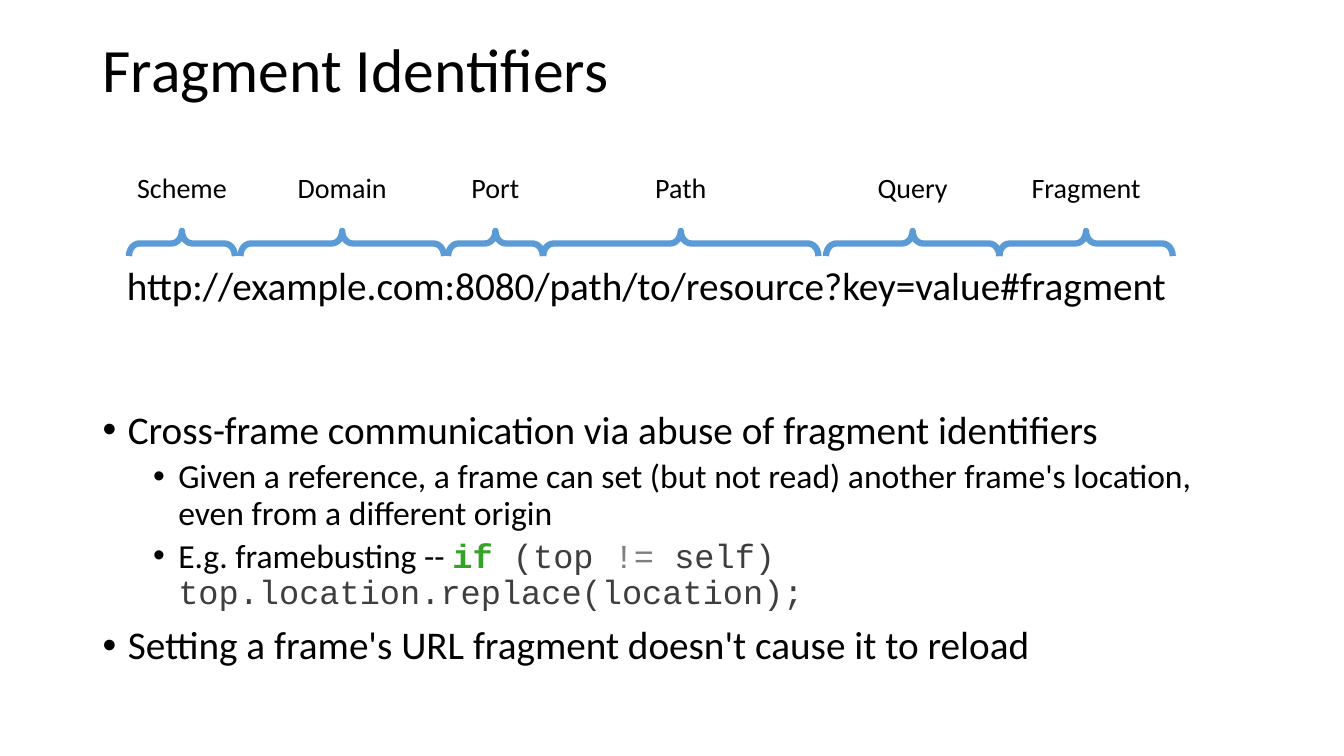
from dataclasses import dataclass
from lxml.etree import SubElement as Sub
from pptx import Presentation
from pptx.dml.color import RGBColor as Rgb
from pptx.enum.shapes import MSO_SHAPE as Kind
from pptx.enum.text import MSO_ANCHOR as Anchor, PP_ALIGN as Align
from pptx.oxml.ns import qn
from pptx.util import Inches, Pt

WIDE, HIGH = Inches(13.33), Inches(7.5)


@dataclass(frozen=True)
class Theme:
    font: str = "Calibri"
    mono: str = "Courier New"
    ink: str = "000000"
    brace: str = "5B9BD5"
    key: str = "35A327"
    code: str = "3E3E3E"
    sign: str = "7F7F7F"
    head: int = 44
    main: int = 28
    sub: int = 24
    tag: int = 20
    line: float = 4.5


LOOK = Theme()

# URL parts: name, brace start and end, label width (percent of slide width)
PARTS = [
    ("Scheme", 9.6, 17.48, 8.25),
    ("Domain", 17.89, 33.04, 8.18),
    ("Port", 33.34, 40.39, 5.1),
    ("Path", 40.42, 60.9, 5.4),
    ("Query", 61.46, 74.36, 6.75),
    ("Fragment", 74.36, 87.26, 9.68),
]

# Bullets: level and runs, each run with its own format
CODE = dict(font=LOOK.mono, color=LOOK.code)
POINTS = [
    (0, [("Cross-frame communication via abuse of fragment identifiers", {})]),
    (1, [("Given a reference, a frame can set (but not read) another frame's "
          "location, even from a different origin", {})]),
    (1, [("E.g. framebusting -- ", {}),
         ("if", dict(font=LOOK.mono, color=LOOK.key, bold=True)),
         (" (top ", CODE),
         ("!=", dict(font=LOOK.mono, color=LOOK.sign)),
         (" self) top.location.replace(location);", CODE)]),
    (0, [("Setting a frame's URL fragment doesn't cause it to reload", {})]),
]


def across(share):
    return round(WIDE * share / 100)


def down(share):
    return round(HIGH * share / 100)


def write(para, text, size=LOOK.main, font=LOOK.font, color=LOOK.ink, bold=False):
    run = para.add_run()
    run.text = text
    run.font.size = Pt(size)
    run.font.name = font
    run.font.bold = bold
    run.font.color.rgb = Rgb.from_string(color)


def frame(slide, left, top, width, height, wrap=False, anchor=Anchor.TOP):
    box = slide.shapes.add_textbox(across(left), down(top), across(width), down(height))
    body = box.text_frame
    body.word_wrap = wrap
    body.vertical_anchor = anchor
    return body


def bullet(para, level):
    para.level = level
    para.line_spacing = 0.9
    para.space_before = Pt(5 if level else 10)
    props = para._p.get_or_add_pPr()
    props.set("marL", str(Inches(0.25 + 0.5 * level)))
    props.set("indent", str(Inches(-0.25)))
    Sub(props, qn("a:buFont"), typeface="Arial")
    Sub(props, qn("a:buChar"), char="•")


def brace(slide, start, end):
    # Drawn upright about its centre, then turned to point up
    span, depth = across(end - start), Inches(0.25)
    mid, row = across((start + end) / 2), down(32.2)
    shape = slide.shapes.add_shape(
        Kind.RIGHT_BRACE, mid - depth // 2, row - span // 2, depth, span)
    shape.rotation = 270
    shape.adjustments[0] = 0.41
    shape.adjustments[1] = 0.5
    shape.shadow.inherit = False
    shape.fill.background()
    shape.line.color.rgb = Rgb.from_string(LOOK.brace)
    shape.line.width = Pt(LOOK.line)


def label(slide, name, start, end, width):
    left = (start + end - width) / 2
    para = frame(slide, left, 21.95, width, 5.87).paragraphs[0]
    para.alignment = Align.CENTER
    write(para, name, size=LOOK.tag)


def title(slide, text):
    para = frame(slide, 6.9, 0, 86.25, 19.33, True, Anchor.MIDDLE).paragraphs[0]
    para.line_spacing = 0.9
    write(para, text, size=LOOK.head)


def points(slide, items):
    body = frame(slide, 6.9, 44.13, 86.25, 54.4, True, Anchor.MIDDLE)
    for spot, (level, runs) in enumerate(items):
        para = body.add_paragraph() if spot else body.paragraphs[0]
        bullet(para, level)
        for text, form in runs:
            write(para, text, size=LOOK.sub if level else LOOK.main, **form)


def main():
    deck = Presentation()
    deck.slide_width, deck.slide_height = WIDE, HIGH
    slide = deck.slides.add_slide(deck.slide_layouts[6])

    # Heading and bullets
    title(slide, "Fragment Identifiers")
    points(slide, POINTS)

    # URL with its named parts
    line = frame(slide, 8.7, 33.87, 79.8, 7.6).paragraphs[0]
    write(line, "http://example.com:8080/path/to/resource?key=value#fragment")
    for name, start, end, width in PARTS:
        brace(slide, start, end)
        label(slide, name, start, end, width)

    deck.save("out.pptx")


if __name__ == "__main__":
    main()
